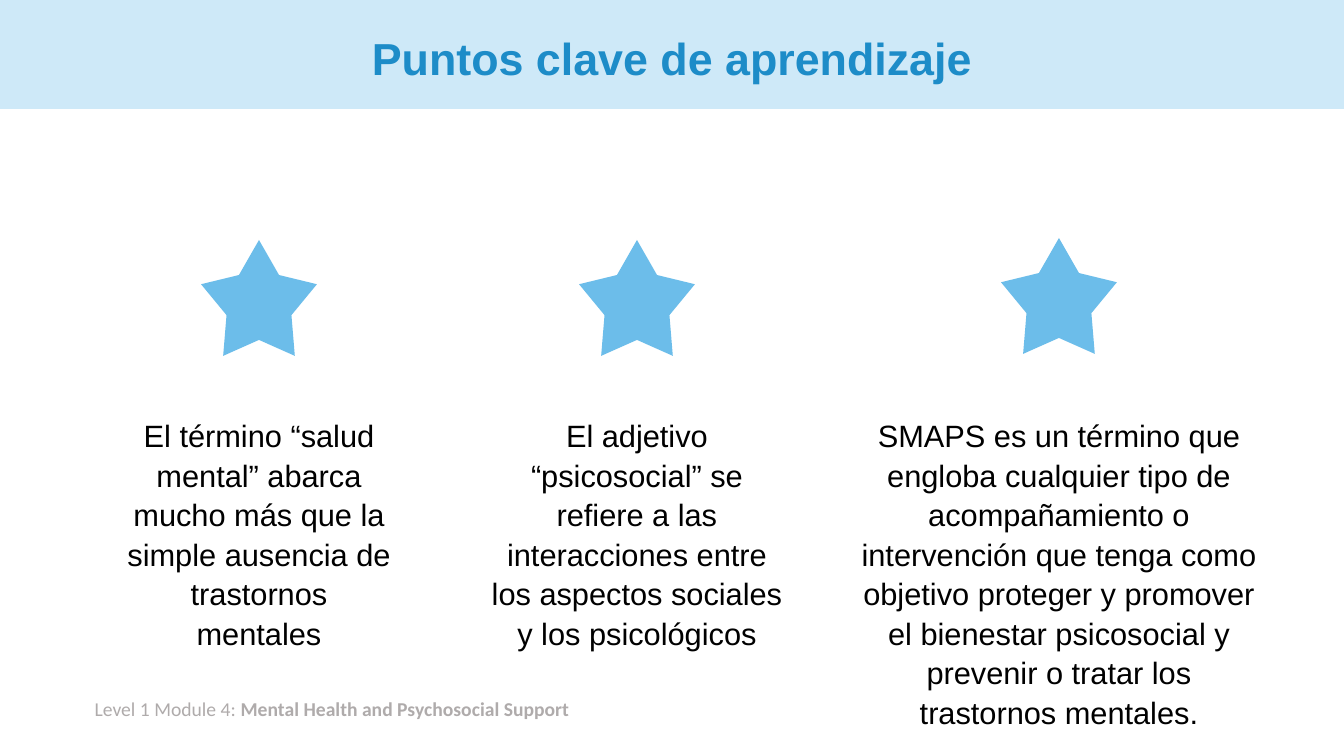
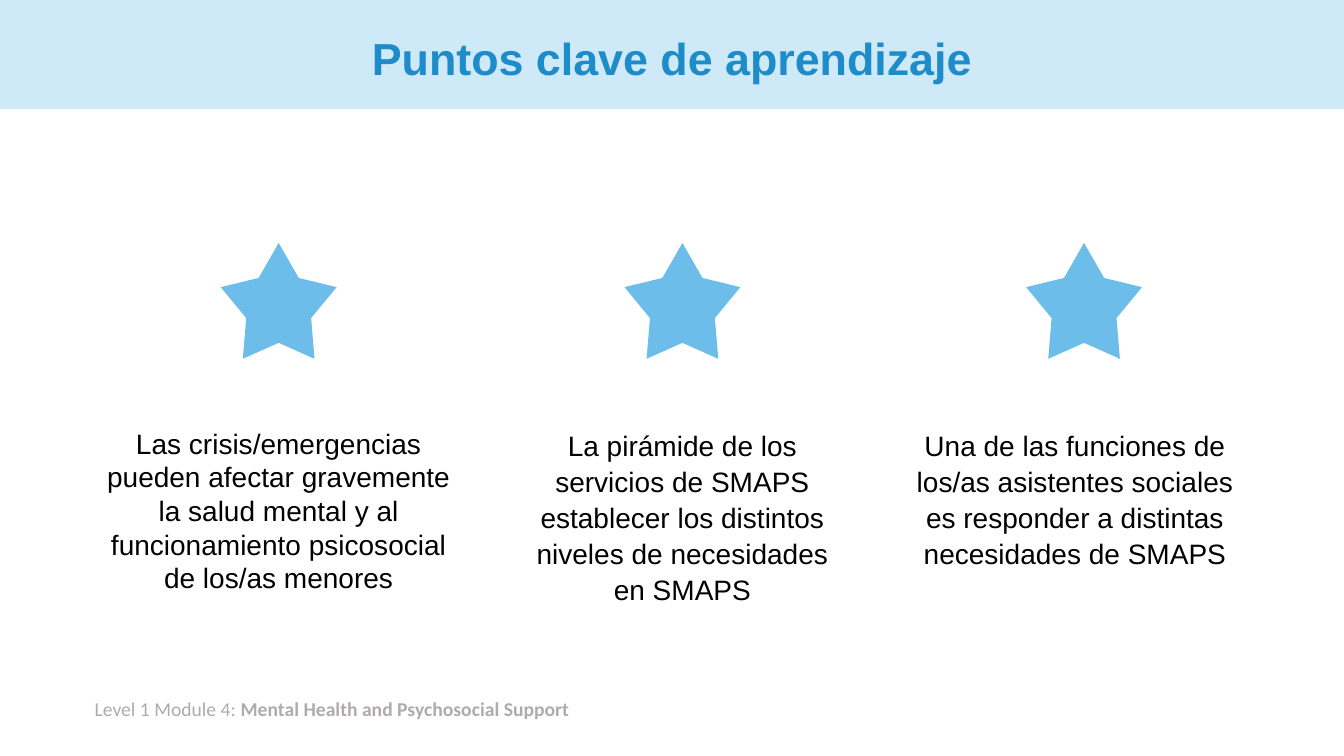
from pptx import Presentation
from pptx.dml.color import RGBColor
from pptx.enum import shapes, text
from pptx.util import Pt

# Shared look
W, H = 960, 540
BAND, BLUE, STAR, GREY, BLACK = "CEE9F8", "1D8CC8", "6CBDEA", "AFABAB", "000000"
STAR_SIZE = 82.8
TITLE = "Puntos clave de aprendizaje"
FOOTER = [("Level 1 Module 4: ", False),
          ("Mental Health and Psychosocial Support", True)]

# Columns: text, left, width, height, line spacing, space after,
# star top, star offset from the column's centre
SLIDES = [
    dict(top=292.3, size=22, columns=[
        ("El término “salud mental” abarca mucho más que la simple ausencia "
         "de trastornos mentales", 83.5, 203, 176, 1.07, 8, 171.4, 0),
        ("El adjetivo “psicosocial” se refiere a las interacciones entre los "
         "aspectos sociales y los psicológicos",
         339.8, 230.4, 176, 1.07, 8, 171.4, 0),
        ("SMAPS es un término que engloba cualquier tipo de acompañamiento o "
         "intervención que tenga como objetivo proteger y promover el "
         "bienestar psicosocial y prevenir o tratar los trastornos mentales.",
         603.4, 306, 233, 1.07, 8, 170, 0),
    ]),
    dict(top=301, size=20, columns=[
        ("Las crisis/emergencias pueden afectar gravemente la salud mental y "
         "al funcionamiento psicosocial de los/as menores",
         66.2, 265.7, 128, 1.0, 0, 173.5, 0),
        ("La pirámide de los servicios de SMAPS establecer los distintos "
         "niveles de necesidades en SMAPS",
         367.2, 240.5, 135, 1.07, 0, 173.5, 0),
        ("Una de las funciones de los/as asistentes sociales es responder a "
         "distintas necesidades de SMAPS",
         642.2, 251.3, 109, 1.07, 8, 173.5, 6.5),
    ]),
]


def color(value):
    return RGBColor.from_string(value)


def place(sp, x, y, w, h):
    sp.left, sp.top, sp.width, sp.height = Pt(x), Pt(y), Pt(w), Pt(h)


def add_run(p, words, size, fill, bold=False, font="Arial"):
    r = p.add_run()
    r.text = words
    r.font.name, r.font.size, r.font.bold = font, Pt(size), bold
    r.font.color.rgb = color(fill)


def add_shape(slide, kind, x, y, w, h, fill):
    sp = slide.shapes.add_shape(kind, Pt(x), Pt(y), Pt(w), Pt(h))
    sp.shadow.inherit = False
    sp.fill.solid()
    sp.fill.fore_color.rgb = color(fill)
    sp.line.fill.background()
    return sp


def add_text(slide, x, y, w, h):
    sp = slide.shapes.add_textbox(Pt(x), Pt(y), Pt(w), Pt(h))
    sp.text_frame.word_wrap = True
    sp.text_frame.auto_size = text.MSO_AUTO_SIZE.SHAPE_TO_FIT_TEXT
    return sp


def style_layout(layout, slide):
    """Give the layout its title position, band and footer."""
    title = layout.placeholders[0]
    place(title, 66.2, 9.4, 828, 68.4)
    title.text_frame.vertical_anchor = text.MSO_ANCHOR.MIDDLE
    band = add_shape(slide, shapes.MSO_SHAPE.RECTANGLE, 0, 0, W, 77.8, BAND)
    footer = add_text(slide, 60.5, 494.6, 445, 24.5)
    for words, bold in FOOTER:
        add_run(footer.text_frame.paragraphs[0], words, 14, GREY, bold, "Calibri")
    # Shapes can only be made on a slide, so move them to the layout
    for i, sp in enumerate((band, footer)):
        sp.element.nvSpPr.cNvPr.set("id", str(20 + i))
        layout.shapes.element.insert(2 + i, sp.element)


def add_title(slide):
    tf = slide.shapes.title.text_frame
    tf.auto_size = text.MSO_AUTO_SIZE.NONE
    p = tf.paragraphs[0]
    p.alignment, p.line_spacing = text.PP_ALIGN.CENTER, 0.9
    add_run(p, TITLE, 32, BLUE, True)


def add_column(slide, top, size, column):
    words, x, w, h, spacing, after, star_top, offset = column
    star_x = x + (w - STAR_SIZE) / 2 + offset
    star = add_shape(slide, shapes.MSO_SHAPE.STAR_5_POINT,
                     star_x, star_top, STAR_SIZE, STAR_SIZE, STAR)
    star.adjustments[0] = 0.28
    p = add_text(slide, x, top, w, h).text_frame.paragraphs[0]
    p.alignment, p.line_spacing = text.PP_ALIGN.CENTER, spacing
    p.space_after = Pt(after)
    add_run(p, words, size, BLACK)


def main():
    prs = Presentation()
    prs.slide_width, prs.slide_height = Pt(W), Pt(H)
    layout = prs.slide_layouts[5]
    for i, content in enumerate(SLIDES):
        slide = prs.slides.add_slide(layout)
        if i == 0:
            style_layout(layout, slide)
        add_title(slide)
        for column in content["columns"]:
            add_column(slide, content["top"], content["size"], column)
    prs.save("out.pptx")


if __name__ == "__main__":
    main()
